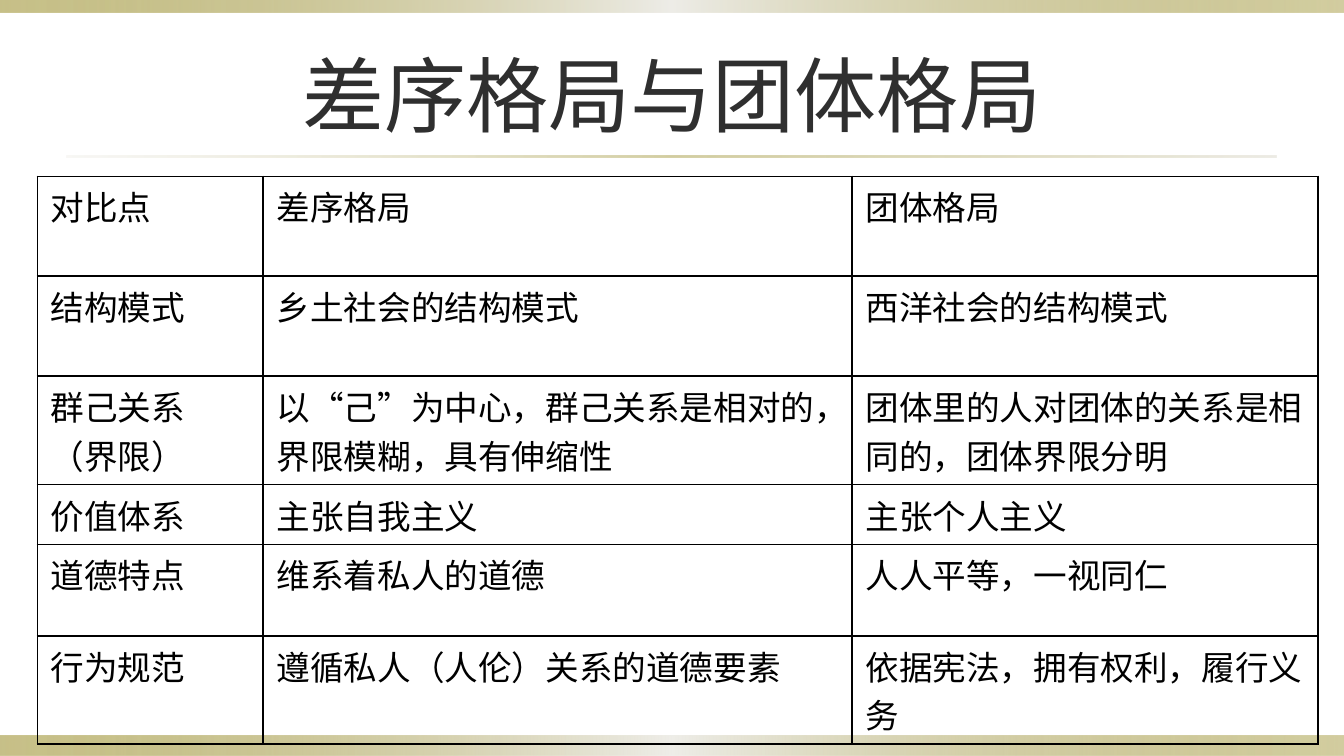
from dataclasses import dataclass

from lxml import etree
from pptx import Presentation
from pptx.dml.color import RGBColor
from pptx.enum.shapes import MSO_SHAPE
from pptx.enum.text import MSO_ANCHOR, MSO_AUTO_SIZE, PP_ALIGN
from pptx.oxml.ns import qn
from pptx.util import Pt

RECTANGLE = MSO_SHAPE.RECTANGLE
MIDDLE, TOP = MSO_ANCHOR.MIDDLE, MSO_ANCHOR.TOP
CENTER, LEFT = PP_ALIGN.CENTER, PP_ALIGN.LEFT
NO_AUTOFIT = MSO_AUTO_SIZE.NONE
TITLE_ONLY = 5


@dataclass(frozen=True)
class Theme:
    font: str = "Cabin"
    title_size: int = 44
    cell_size: int = 18
    title_color: str = "2F2F2F"
    cell_color: str = "000000"
    border_color: str = "000000"
    border_width: int = 1
    bar_stops: tuple = ((0, "918415", 50), (50, "EEEDE8", 100), (100, "918415", 40))
    rule_stops: tuple = ((0, "DCD9CC", 20), (50, "918415", 40), (100, "DCD9CC", 50))


THEME = Theme()
TITLE = "差序格局与团体格局"
COLUMN_WIDTHS = (121, 315.5, 249.5)
ROW_HEIGHTS = (53.5, 53.5, 49, 27, 49, 49)
ROWS = (
    ("对比点", "差序格局", "团体格局"),
    ("结构模式", "乡土社会的结构模式", "西洋社会的结构模式"),
    ("群己关系（界限）", "以“己”为中心，群己关系是相对的，界限模糊，具有伸缩性",
     "团体里的人对团体的关系是相同的，团体界限分明"),
    ("价值体系", "主张自我主义", "主张个人主义"),
    ("道德特点", "维系着私人的道德", "人人平等，一视同仁"),
    ("行为规范", "遵循私人（人伦）关系的道德要素", "依据宪法，拥有权利，履行义务"),
)


def style_paragraph(paragraph, size, color, alignment):
    paragraph.alignment = alignment
    paragraph.font.name = THEME.font
    paragraph.font.size = Pt(size)
    paragraph.font.color.rgb = RGBColor.from_string(color)


def add_gradient_bar(slide, left, top, width, height, stops):
    shape = slide.shapes.add_shape(RECTANGLE, Pt(left), Pt(top), Pt(width), Pt(height))
    shape.shadow.inherit = False
    shape.line.fill.background()
    shape.fill.gradient()
    shape.fill.gradient_angle = 0
    stop_list = next(shape.element.iter(qn("a:gsLst")))
    for stop in list(stop_list):
        stop_list.remove(stop)
    for position, color, opacity in stops:
        stop = etree.SubElement(stop_list, qn("a:gs"), pos=str(position * 1000))
        color_element = etree.SubElement(stop, qn("a:srgbClr"), val=color)
        etree.SubElement(color_element, qn("a:alpha"), val=str(opacity * 1000))


def add_frame(slide, width, height):
    add_gradient_bar(slide, 0, height - 10.8, width, 10.8, THEME.bar_stops)
    add_gradient_bar(slide, 0, 0, width, 6.5, THEME.bar_stops)


def add_heading(slide, left, top, width, height):
    title = slide.shapes.title
    title.left, title.top, title.width, title.height = Pt(left), Pt(top), Pt(width), Pt(height)
    frame = title.text_frame
    frame.text = TITLE
    frame.auto_size = NO_AUTOFIT
    frame.vertical_anchor = MIDDLE
    style_paragraph(frame.paragraphs[0], THEME.title_size, THEME.title_color, CENTER)
    add_gradient_bar(slide, left, top + height - 0.5, width, 1, THEME.rule_stops)


def add_borders(cell):
    properties = cell._tc.get_or_add_tcPr()
    for index, side in enumerate(("lnL", "lnR", "lnT", "lnB")):
        line = etree.Element(qn("a:" + side), w=str(Pt(THEME.border_width)))
        fill = etree.SubElement(line, qn("a:solidFill"))
        etree.SubElement(fill, qn("a:srgbClr"), val=THEME.border_color)
        properties.insert(index, line)


def fill_cell(cell, text):
    cell.text = text
    cell.vertical_anchor = TOP
    cell.margin_left = cell.margin_right = Pt(7.2)
    cell.margin_top = cell.margin_bottom = Pt(3)
    cell.fill.background()
    style_paragraph(cell.text_frame.paragraphs[0], THEME.cell_size, THEME.cell_color, LEFT)
    add_borders(cell)


def add_comparison(slide, left, top):
    table = slide.shapes.add_table(
        len(ROWS), len(COLUMN_WIDTHS), Pt(left), Pt(top),
        Pt(sum(COLUMN_WIDTHS)), Pt(sum(ROW_HEIGHTS))).table
    table.first_row = table.horz_banding = False
    for column, width in zip(table.columns, COLUMN_WIDTHS):
        column.width = Pt(width)
    for row, height, texts in zip(table.rows, ROW_HEIGHTS, ROWS):
        row.height = Pt(height)
        for cell, text in zip(row.cells, texts):
            fill_cell(cell, text)


def main():
    width, height = 720, 405
    presentation = Presentation()
    presentation.slide_width, presentation.slide_height = Pt(width), Pt(height)
    slide = presentation.slides.add_slide(presentation.slide_layouts[TITLE_ONLY])
    add_frame(slide, width, height)
    add_heading(slide, 36, 16.5, width - 72, 67.5)
    add_comparison(slide, 20, 94.5)
    presentation.save("out.pptx")


if __name__ == "__main__":
    main()
